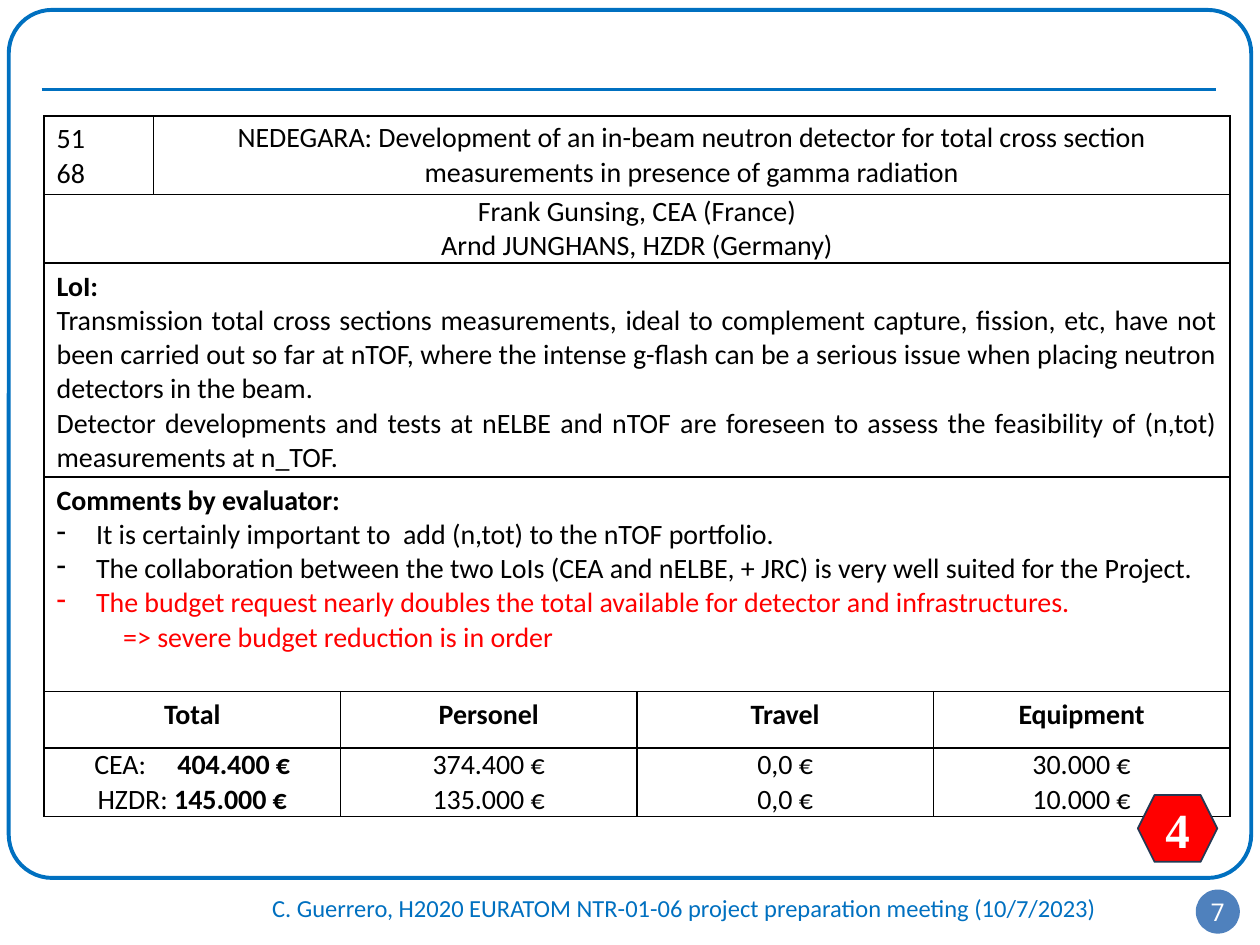
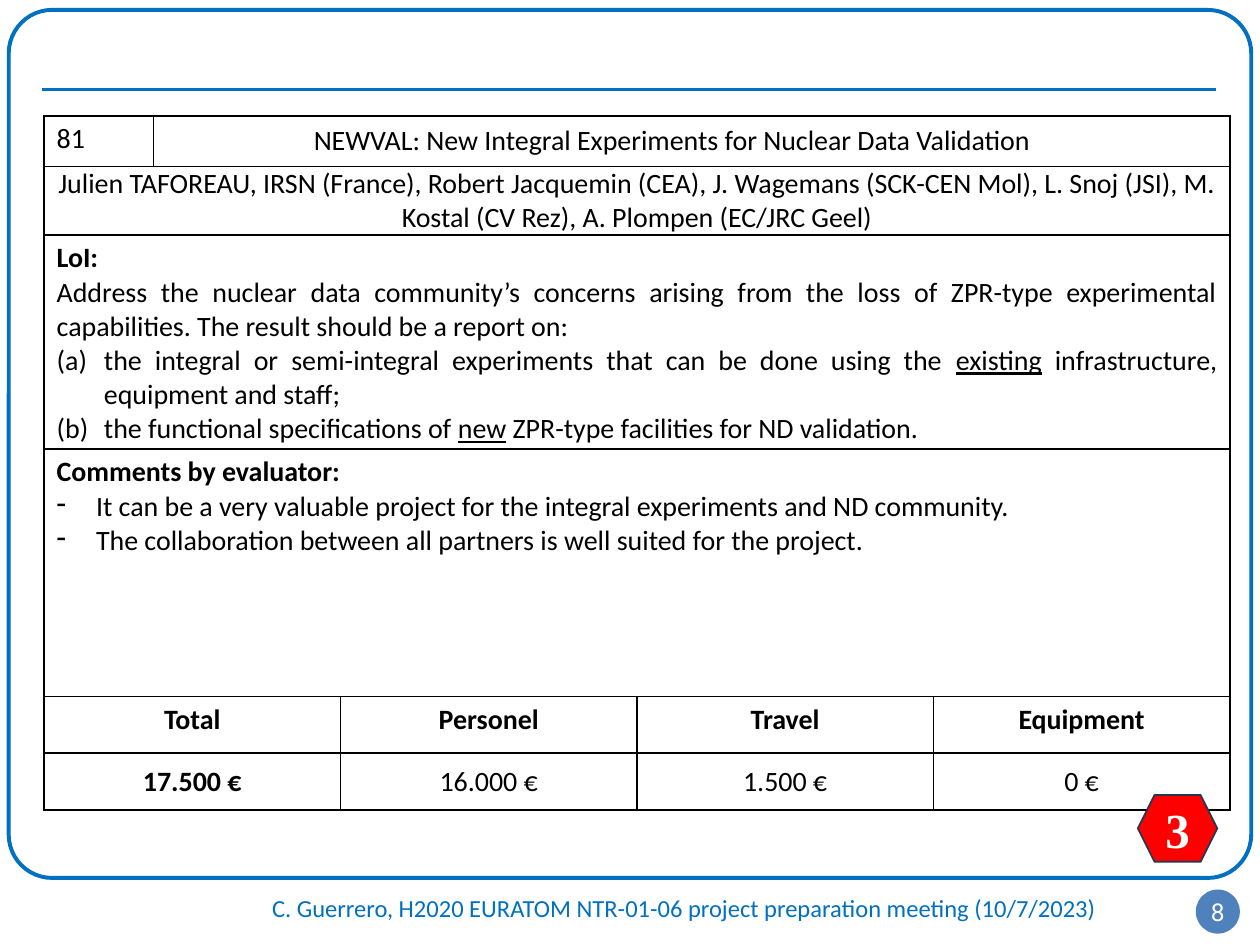
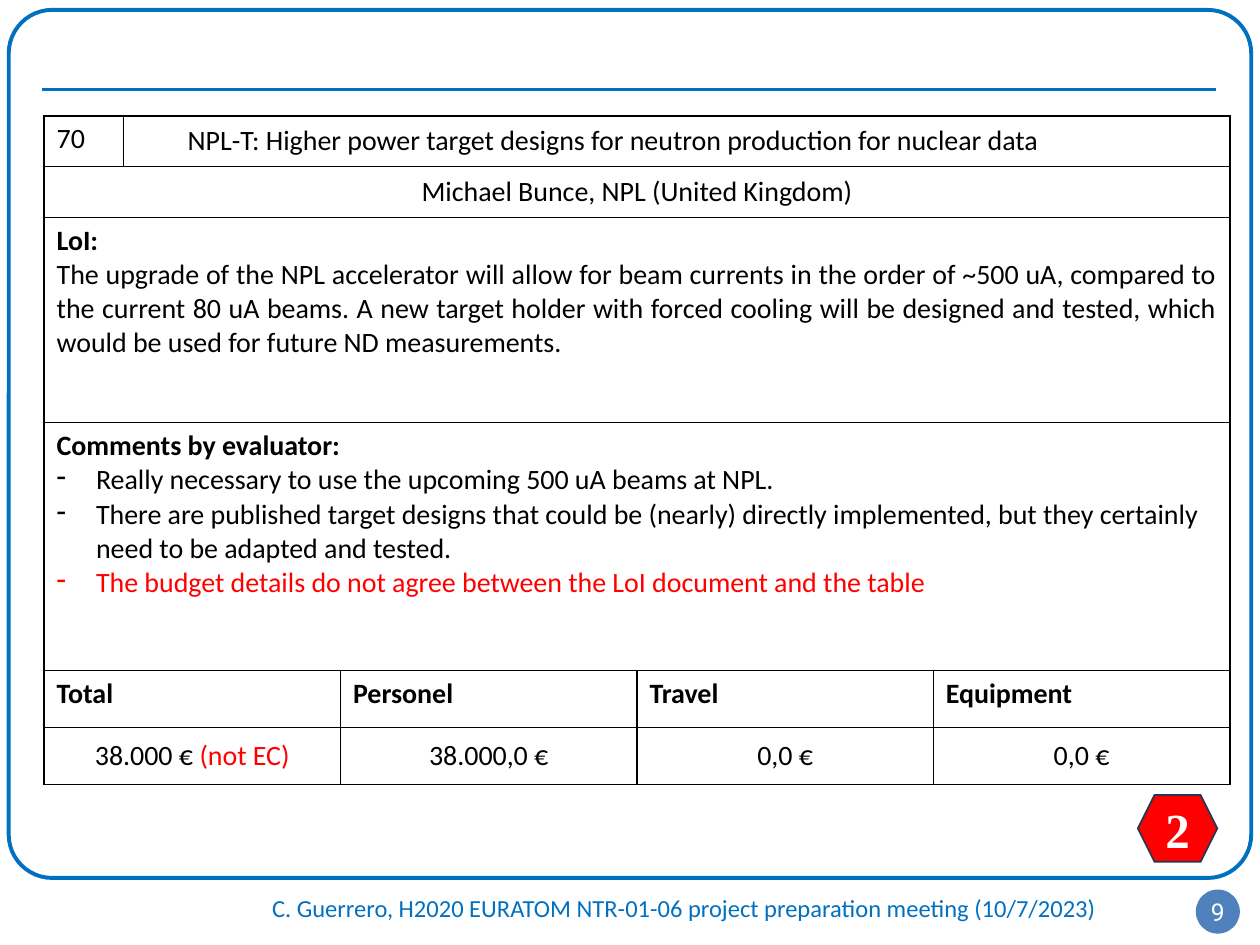
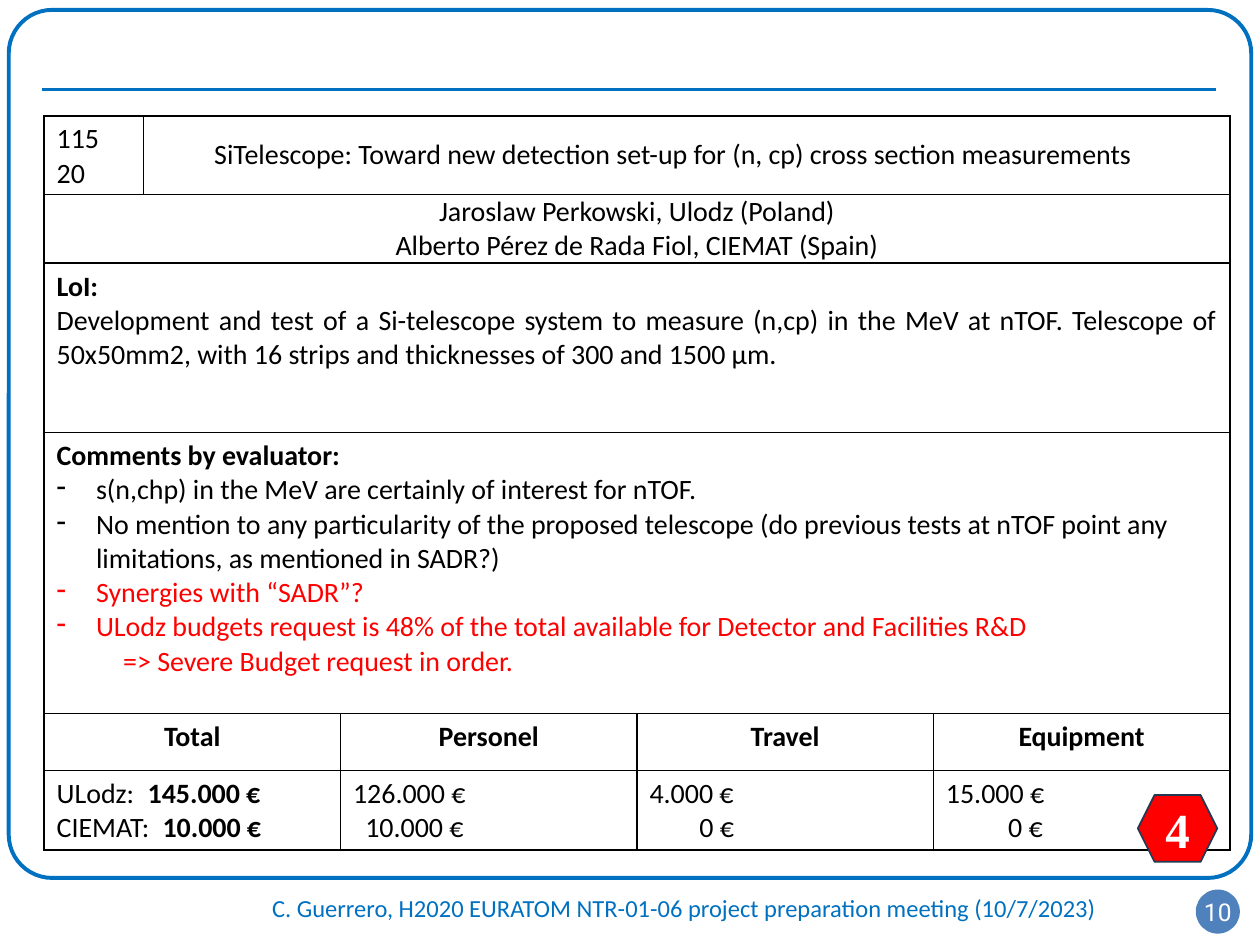
"""Build four proposal evaluation slides with a shared frame, footer and table layout."""
from lxml.etree import SubElement
from pptx import Presentation
from pptx.dml.color import RGBColor
from pptx.enum.shapes import MSO_CONNECTOR, MSO_SHAPE
from pptx.enum.text import MSO_ANCHOR, PP_ALIGN
from pptx.oxml.ns import qn
from pptx.util import Pt

COLORS = {"blue": "0070C0", "badge": "4F81BD", "red": "FF0000", "outline": "233953",
          "black": "000000", "white": "FFFFFF"}
COLOR = {name: RGBColor.from_string(value) for name, value in COLORS.items()}
FOOTER = "C. Guerrero, H2020 EURATOM NTR-01-06 project preparation meeting (10/7/2023)"
BUDGET_HEADS = ["Total", "Personel", "Travel", "Equipment"]
TABLE_LEFT, TABLE_TOP, BUDGET_WIDTH = 25.2, 66.2, 169.4
MERGES = [(0, 1, 4), (1, 0, 4), (2, 0, 4), (3, 0, 4), (4, 0, 1), (5, 0, 1)]

LEFT, CENTER, JUSTIFY = PP_ALIGN.LEFT, PP_ALIGN.CENTER, PP_ALIGN.JUSTIFY
DASH = ("buChar", "char", "-")
LETTER = ("buAutoNum", "type", "alphaLcParenBoth")
# Each style holds alignment, left indent, first-line indent and bullet.
STYLES = {
    "left": (LEFT, 0, 0, None),
    "center": (CENTER, 0, 0, None),
    "justify": (JUSTIFY, 0, 0, None),
    "dash": (LEFT, 22.5, -22.5, DASH),
    "letter": (JUSTIFY, 27, -27, LETTER),
    "conclusion": (LEFT, 38, 0, None),
    "first partner": (LEFT, 75.5, -47.5, None),
    "short label": (LEFT, 52, -52, None),
    "long label": (LEFT, 60.5, -60.5, None),
    "personnel": (LEFT, 7, 0, None),
    "travel": (LEFT, 28.5, 0, None),
    "equipment": (LEFT, 35.5, 0, None),
}

PROPOSALS = [
    {
        "number": "7", "score": "4", "code width": 62.6,
        "heights": [45.1, 39.1, 122.3, 122.6, 32.3, 38.9],
        "codes": ["51", "68"],
        "title": ("center", "NEDEGARA: Development of an in-beam neutron detector for total cross "
                            "section measurements in presence of gamma radiation"),
        "authors": ["Frank Gunsing, CEA (France)", "Arnd JUNGHANS, HZDR (Germany)"],
        "letter": [
            ("justify", "Transmission total cross sections measurements, ideal to complement "
                        "capture, fission, etc, have not been carried out so far at nTOF, where "
                        "the intense g-flash can be a serious issue when placing neutron "
                        "detectors in the beam."),
            ("justify", "Detector developments and tests at nELBE and nTOF are foreseen to assess "
                        "the feasibility of (n,tot) measurements at n_TOF."),
        ],
        "comments": [
            ("dash", "It is certainly important to  add (n,tot) to the nTOF portfolio."),
            ("dash", "The collaboration between the two LoIs (CEA and nELBE, + JRC) is very well "
                     "suited for the Project."),
            ("dash", ("The budget request nearly doubles the total available for detector and "
                      "infrastructures.", "red")),
            ("conclusion", ("=> severe budget reduction is in order", "red")),
        ],
        "heads": "center", "amounts anchor": MSO_ANCHOR.MIDDLE,
        "amounts": [
            [("first partner", "CEA:\t", ("404.400 €", "bold")),
             ("center", "HZDR: ", ("145.000 €", "bold"))],
            [("center", "374.400 €"), ("center", "135.000 €")],
            [("center", "0,0 €"), ("center", "0,0 €")],
            [("center", "30.000 €"), ("center", "10.000 €")],
        ],
    },
    {
        "number": "8", "score": "3", "code width": 62.6,
        "heights": [28.9, 39.1, 122.3, 141.7, 32.3, 32.5],
        "codes": ["81"],
        "title": ("center", "NEWVAL: New Integral Experiments for Nuclear Data Validation\t"),
        "authors": ["Julien TAFOREAU, IRSN (France), Robert Jacquemin (CEA), J. Wagemans (SCK-CEN "
                    "Mol), L. Snoj (JSI), M. Kostal (CV Rez), A. Plompen (EC/JRC Geel)"],
        "letter": [
            ("justify", "Address the nuclear data community’s concerns arising from the loss of "
                        "ZPR-type experimental capabilities. The result should be a report on:"),
            ("letter", "the integral or semi-integral experiments that can be done using the ",
             ("existing", "underline"), " infrastructure, equipment and staff;"),
            ("letter", "the functional specifications of ", ("new", "underline"),
             " ZPR-type facilities for ND validation."),
        ],
        "comments": [
            ("dash", "It can be a very valuable project for the integral experiments and ND "
                     "community."),
            ("dash", "The collaboration between all partners is well suited for the project."),
        ],
        "heads": "center", "amounts anchor": MSO_ANCHOR.MIDDLE,
        "amounts": [[("center", ("17.500 €", "bold"))], [("center", "16.000 €")],
                    [("center", "1.500 €")], [("center", "0 €")]],
    },
    {
        "number": "9", "score": "2", "code width": 45.4,
        "heights": [28.9, 29.1, 117.4, 141.7, 32.5, 32.5],
        "codes": ["70"],
        "title": ("left", "\tNPL-T: Higher power target designs for neutron production for "
                          "nuclear data"),
        "authors": ["Michael Bunce, NPL (United Kingdom)"],
        "letter": [
            ("justify", "The upgrade of the NPL accelerator will allow for beam currents in the "
                        "order of ~500 uA, compared to the current 80 uA beams. A new target "
                        "holder with forced cooling will be designed and tested, which would be "
                        "used for future ND measurements."),
        ],
        "comments": [
            ("dash", "Really necessary to use the upcoming 500 uA beams at NPL."),
            ("dash", "There are published target designs that could be (nearly) directly "
                     "implemented, but they certainly need to be adapted and tested."),
            ("dash", ("The budget details do not agree between the LoI document and the table",
                      "red")),
        ],
        "heads": "left", "amounts anchor": MSO_ANCHOR.MIDDLE,
        "amounts": [[("center", "38.000 € ", ("(not EC)", "red"))], [("center", "38.000,0 €")],
                    [("center", "0,0 €")], [("center", "0,0 €")]],
    },
    {
        "number": "10", "score": "4", "code width": 56.9,
        "heights": [45.1, 39.1, 96.9, 160.6, 32.5, 45.4],
        "codes": ["115", "20"],
        "title": ("center", "SiTelescope: Toward new detection set-up for (n, cp) cross section "
                            "measurements\t"),
        "authors": ["Jaroslaw Perkowski, Ulodz (Poland)",
                    "Alberto Pérez de Rada Fiol, CIEMAT (Spain)"],
        "letter": [
            ("justify", "Development and test of a Si-telescope system to measure (n,cp) in the "
                        "MeV at nTOF. Telescope of 50x50mm2, with 16 strips and thicknesses of "
                        "300 and 1500 μm."),
        ],
        "comments": [
            ("dash", "s(n,chp) in the MeV are certainly of interest for nTOF."),
            ("dash", "No mention to any particularity of the proposed telescope (do previous "
                     "tests at nTOF point any limitations, as mentioned in SADR?)"),
            ("dash", ("Synergies with “SADR”?", "red")),
            ("dash", ("ULodz budgets request is 48% of the total available for Detector and "
                      "Facilities R&D", "red")),
            ("conclusion", ("=> Severe Budget request in order.", "red")),
        ],
        "heads": "center", "amounts anchor": MSO_ANCHOR.TOP,
        "amounts": [
            [("short label", "ULodz:\t", ("145.000 €", "bold")),
             ("long label", "CIEMAT:\t", ("10.000 €", "bold"))],
            [("left", "126.000 €"), ("personnel", "10.000 €")],
            [("left", "4.000 €"), ("travel", "0 €")],
            [("left", "15.000 €"), ("equipment", "0 €")],
        ],
    },
]


def fill_cell(cell, paragraphs, anchor=MSO_ANCHOR.TOP):
    """Write styled paragraphs, each a style name followed by plain or marked spans."""
    middle = anchor == MSO_ANCHOR.MIDDLE
    cell.vertical_anchor = anchor
    cell.margin_left = cell.margin_right = Pt(0.7 if middle else 7.2)
    cell.margin_top = Pt(0 if middle else 3.6)
    cell.margin_bottom = Pt(0 if middle else 1)
    frame = cell.text_frame
    for index, (style, *spans) in enumerate(paragraphs):
        paragraph = frame.add_paragraph() if index else frame.paragraphs[0]
        align, indent, first, bullet = STYLES[style]
        paragraph.alignment = align
        properties = paragraph._p.get_or_add_pPr()
        properties.set("marL", str(Pt(indent)))
        properties.set("indent", str(Pt(first)))
        if bullet:
            tag, attribute, value = bullet
            SubElement(properties, qn(f"a:{tag}")).set(attribute, value)
        for item in spans:
            words, mark = (item, "") if isinstance(item, str) else item
            span = paragraph.add_run()
            span.text = words
            span.font.name, span.font.size = "Calibri", Pt(16)
            span.font.bold = mark == "bold"
            span.font.underline = mark == "underline"
            span.font.color.rgb = COLOR["red" if mark == "red" else "black"]


def add_label(page, kind, bounds, words, font, fill=None, line=None, weight=1):
    """Add a centred shape, or a text box when kind is None, and return it."""
    left, top, width, height = (Pt(value) for value in bounds)
    if kind is None:
        box = page.shapes.add_textbox(left, top, width, height)
    else:
        box = page.shapes.add_shape(kind, left, top, width, height)
        box.shadow.inherit = False
        box.fill.solid()
        box.fill.fore_color.rgb = COLOR[fill]
        if line:
            box.line.color.rgb, box.line.width = COLOR[line], Pt(weight)
        else:
            box.line.fill.background()
    if words:
        box.text_frame.text = words
        paragraph = box.text_frame.paragraphs[0]
        paragraph.alignment = CENTER
        span = paragraph.runs[0]
        name, size, color, bold = font
        span.font.name, span.font.size, span.font.bold = name, Pt(size), bold
        span.font.color.rgb = COLOR[color]
    return box


deck = Presentation()
deck.slide_width, deck.slide_height = Pt(720), Pt(540)

for proposal in PROPOSALS:
    page = deck.slides.add_slide(deck.slide_layouts[6])

    border = add_label(page, MSO_SHAPE.ROUNDED_RECTANGLE, (5, 5.7, 710, 496), "", None,
                       "white", "blue", 2.25)
    border.adjustments[0] = 0.05
    footer = add_label(page, None, (121.7, 506.9, 538.6, 28), FOOTER,
                       ("Calibri", 14, "blue", False))
    footer.text_frame.word_wrap = True
    footer.text_frame.margin_bottom = Pt(7.2)
    rule = page.shapes.add_connector(MSO_CONNECTOR.STRAIGHT, Pt(23.8), Pt(51), Pt(694.8), Pt(51))
    rule.line.color.rgb, rule.line.width = COLOR["blue"], Pt(1.5)
    SubElement(rule._element.spPr, qn("a:effectLst"))
    badge = add_label(page, MSO_SHAPE.OVAL, (683.3, 508.3, 25.2, 25.2), proposal["number"],
                      ("Roboto", 14, "white", False), "badge")
    inner = badge.text_frame
    inner.word_wrap = False
    inner.margin_left = inner.margin_right = inner.margin_top = inner.margin_bottom = 0
    inner.vertical_anchor = MSO_ANCHOR.MIDDLE

    heights = proposal["heights"]
    table = page.shapes.add_table(6, 5, Pt(TABLE_LEFT), Pt(TABLE_TOP), Pt(4 * BUDGET_WIDTH),
                                  Pt(sum(heights))).table
    table.first_row = table.horz_banding = False
    code_width = proposal["code width"]
    widths = [code_width, BUDGET_WIDTH - code_width] + 3 * [BUDGET_WIDTH]
    for column, width in zip(table.columns, widths):
        column.width = Pt(width)
    for row, height in zip(table.rows, heights):
        row.height = Pt(height)
        for cell in row.cells:
            properties = cell._tc.get_or_add_tcPr()
            for side in ("lnL", "lnR", "lnT", "lnB"):
                edge = SubElement(properties, qn(f"a:{side}"), w=str(Pt(1)))
                paint = SubElement(edge, qn("a:solidFill"))
                SubElement(paint, qn("a:srgbClr"), val=COLORS["black"])
            cell.fill.solid()
            cell.fill.fore_color.rgb = COLOR["white"]
    for row, first, last in MERGES:
        table.cell(row, first).merge(table.cell(row, last))

    fill_cell(table.cell(0, 0), [("left", code) for code in proposal["codes"]])
    fill_cell(table.cell(0, 1), [proposal["title"]], MSO_ANCHOR.MIDDLE)
    fill_cell(table.cell(1, 0), [("center", name) for name in proposal["authors"]],
              MSO_ANCHOR.MIDDLE)
    fill_cell(table.cell(2, 0), [("justify", ("LoI:", "bold"))] + proposal["letter"])
    fill_cell(table.cell(3, 0),
              [("left", ("Comments by evaluator:", "bold"))] + proposal["comments"])
    for column, head, amounts in zip((0, 2, 3, 4), BUDGET_HEADS, proposal["amounts"]):
        fill_cell(table.cell(4, column), [(proposal["heads"], (head, "bold"))])
        fill_cell(table.cell(5, column), amounts, proposal["amounts anchor"])

    score = add_label(page, MSO_SHAPE.HEXAGON, (650.2, 454.3, 45.4, 38.2), proposal["score"],
                      ("Times New Roman", 28, "white", True), "red", "outline")
    score.text_frame.vertical_anchor = MSO_ANCHOR.MIDDLE

deck.save("out.pptx")
